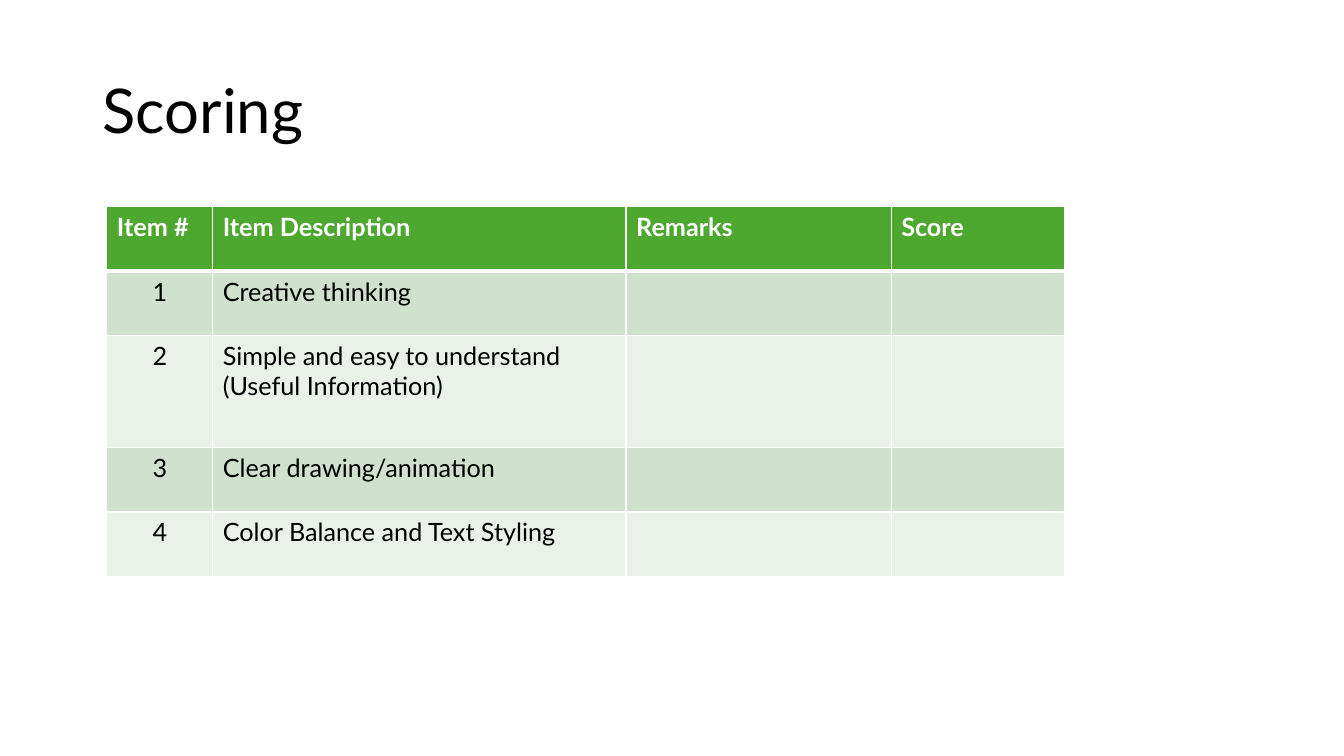
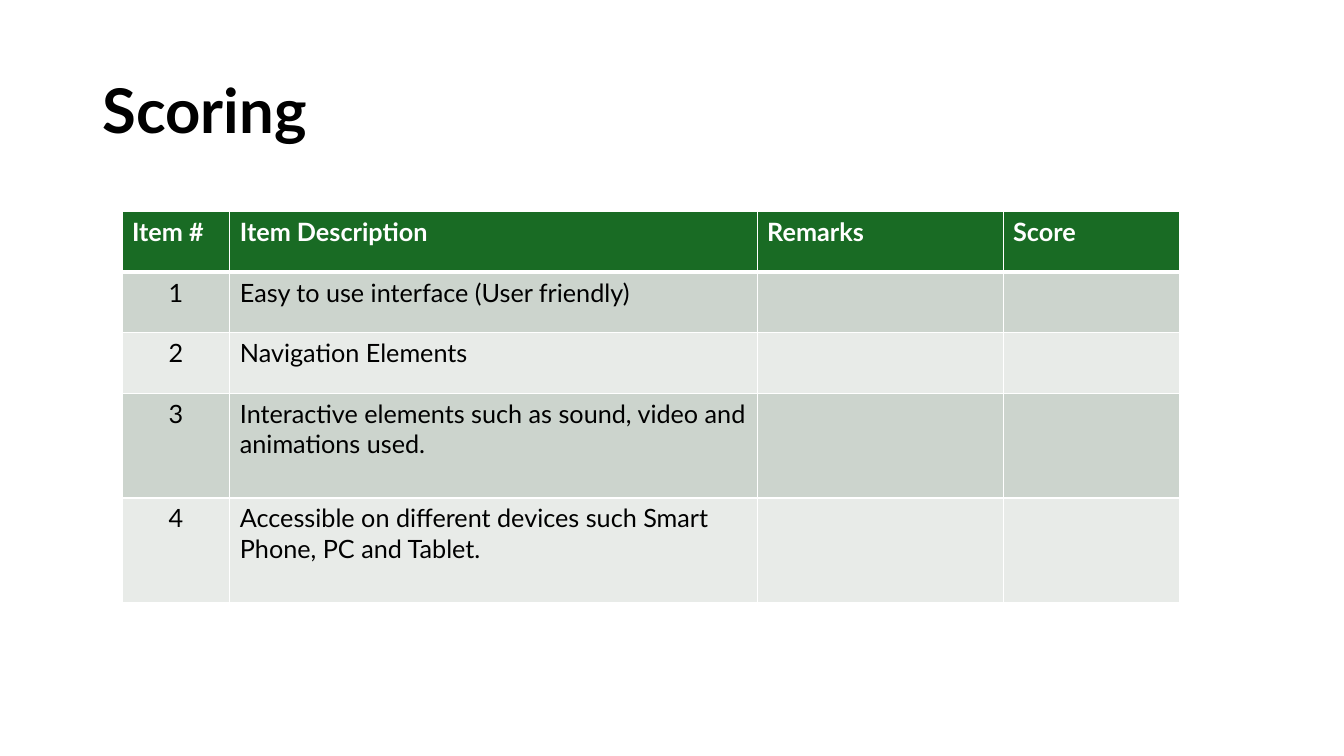
from lxml import etree
from pptx import Presentation
from pptx.dml.color import RGBColor
from pptx.enum.text import MSO_ANCHOR, PP_ALIGN
from pptx.oxml.ns import qn
from pptx.util import Inches, Pt

CENTER = PP_ALIGN.CENTER
LEFT = PP_ALIGN.LEFT
MIDDLE = MSO_ANCHOR.MIDDLE

FONT = "Lato"
COLORS = {
    "text": "000000",
    "white": "FFFFFF",
    "bright": "4EA72E",
    "bright_dark_band": "D0E1CD",
    "bright_light_band": "E9F1E8",
    "deep": "196B24",
    "deep_dark_band": "CCD4CD",
    "deep_light_band": "E8EBE8",
}
HEADERS = ["Item #", "Item Description", "Remarks", "Score"]
THIN, THICK = 1, 3

SCORE_SHEETS = [
    {
        "title": "Scoring",
        "title_bold": False,
        "theme": "bright",
        "position": (1.06, 2.05),
        "columns": [1.05, 4.1, 2.63, 1.72],
        "rows": [0.64, 0.64, 1.11, 0.64, 0.64],
        "items": [
            "Creative thinking",
            "Simple and easy to understand (Useful Information)",
            "Clear drawing/animation",
            "Color Balance and Text Styling",
        ],
    },
    {
        "title": "Scoring",
        "title_bold": True,
        "theme": "deep",
        "position": (1.21, 2.1),
        "columns": [1.07, 5.23, 2.44, 1.75],
        "rows": [0.6, 0.6, 0.6, 1.04, 1.04],
        "items": [
            "Easy to use interface (User friendly)",
            "Navigation Elements",
            "Interactive elements such as sound, video and animations used.",
            "Accessible on different devices such Smart Phone, PC and Tablet.",
        ],
    },
]


def write_text(text_frame, text, size=18, color="text", bold=False, align=LEFT, spacing=1.0):
    paragraph = text_frame.paragraphs[0]
    paragraph.alignment = align
    paragraph.line_spacing = spacing
    run = paragraph.add_run()
    run.text = text
    run.font.name = FONT
    run.font.size = Pt(size)
    run.font.bold = bold
    run.font.color.rgb = RGBColor.from_string(COLORS[color])


def add_title(slide, text, bold):
    title = slide.shapes.add_textbox(Inches(0.92), Inches(0.4), Inches(11.5), Inches(1.45))
    title.text_frame.word_wrap = True
    title.text_frame.vertical_anchor = MIDDLE
    write_text(title.text_frame, text, size=44, bold=bold, spacing=0.9)


def set_borders(cell, top, bottom):
    properties = cell._tc.get_or_add_tcPr()
    widths = {"a:lnL": THIN, "a:lnR": THIN, "a:lnT": top, "a:lnB": bottom}
    for tag, width in widths.items():
        line = etree.SubElement(properties, qn(tag), w=str(Pt(width)))
        fill = etree.SubElement(line, qn("a:solidFill"))
        etree.SubElement(fill, qn("a:srgbClr"), val=COLORS["white"])


def add_score_table(slide, sheet):
    rows = [HEADERS] + [
        [str(number), item, "", ""] for number, item in enumerate(sheet["items"], start=1)
    ]
    left, top = sheet["position"]
    table = slide.shapes.add_table(
        len(rows), len(HEADERS), Inches(left), Inches(top),
        Inches(sum(sheet["columns"])), Inches(sum(sheet["rows"])),
    ).table
    for column, width in zip(table.columns, sheet["columns"]):
        column.width = Inches(width)
    for row, height in zip(table.rows, sheet["rows"]):
        row.height = Inches(height)

    theme = sheet["theme"]
    for row_index, texts in enumerate(rows):
        is_header = row_index == 0
        band = "_dark_band" if row_index % 2 else "_light_band"
        fill_color = theme if is_header else theme + band
        for column_index, text in enumerate(texts):
            cell = table.cell(row_index, column_index)
            set_borders(
                cell,
                top=THICK if row_index == 1 else THIN,
                bottom=THICK if is_header else THIN,
            )
            cell.fill.solid()
            cell.fill.fore_color.rgb = RGBColor.from_string(COLORS[fill_color])
            if text:
                write_text(
                    cell.text_frame, text,
                    color="white" if is_header else "text",
                    bold=is_header,
                    align=CENTER if column_index == 0 and not is_header else LEFT,
                )


def main():
    presentation = Presentation()
    presentation.slide_width = Inches(13.33)
    presentation.slide_height = Inches(7.5)
    for sheet in SCORE_SHEETS:
        slide = presentation.slides.add_slide(presentation.slide_layouts[6])
        add_title(slide, sheet["title"], sheet["title_bold"])
        add_score_table(slide, sheet)
    presentation.save("out.pptx")


if __name__ == "__main__":
    main()
